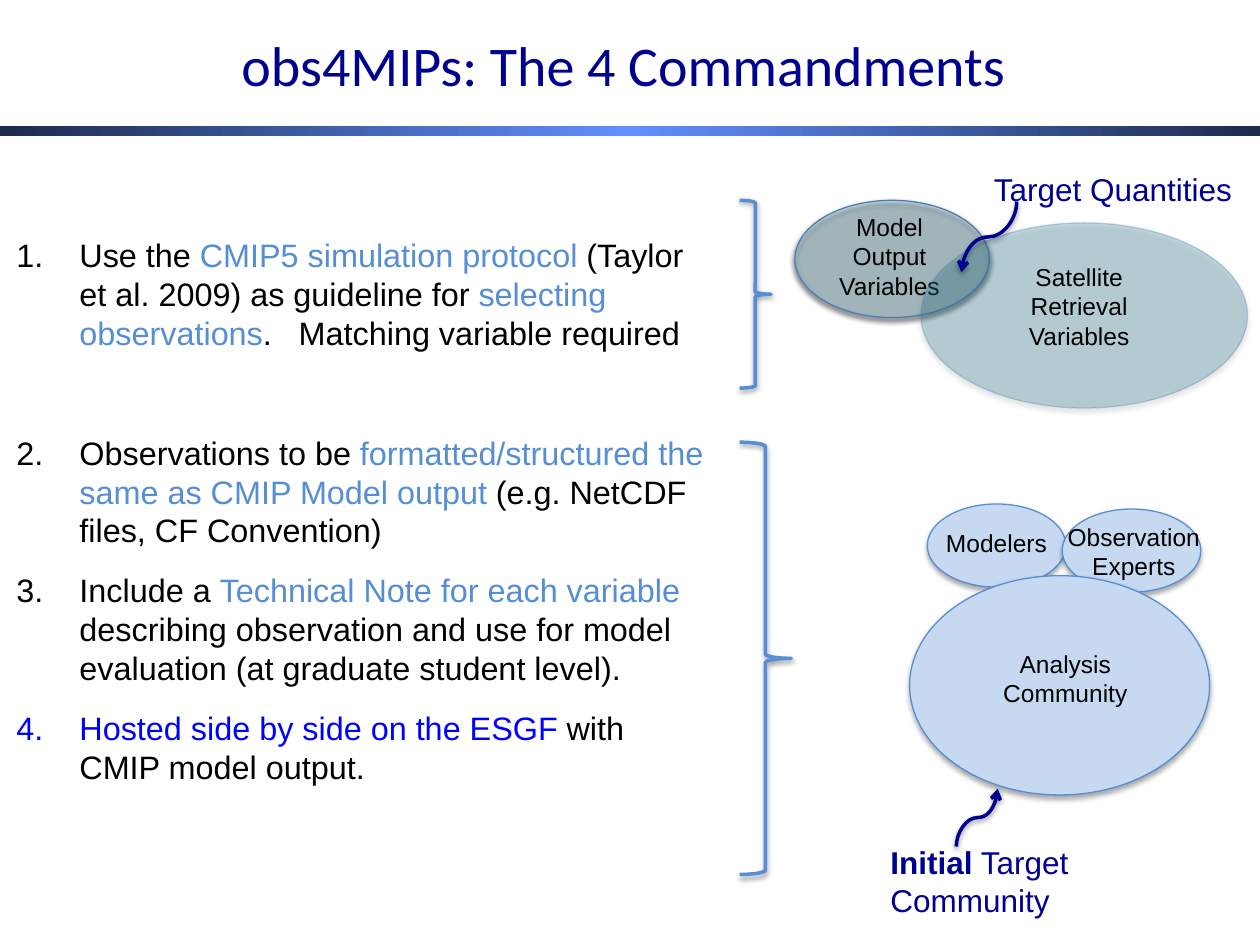
from dataclasses import dataclass
from typing import Optional

import lxml.etree
import pptx
import pptx.dml.color
import pptx.enum.dml
import pptx.enum.shapes
import pptx.enum.text
import pptx.oxml
import pptx.oxml.ns
import pptx.util

Pt = pptx.util.Pt
RGB = pptx.dml.color.RGBColor
Align = pptx.enum.text.PP_ALIGN
Anchor = pptx.enum.text.MSO_ANCHOR
Fit = pptx.enum.text.MSO_AUTO_SIZE
Kind = pptx.enum.shapes.MSO_SHAPE
qn = pptx.oxml.ns.qn

BLACK = RGB(0, 0, 0)
NAVY = RGB(0x00, 0x00, 0x90)
BLUE = RGB(0x00, 0x00, 0xFF)
SKY = RGB(0x55, 0x8E, 0xD5)
PALE = RGB(0xC6, 0xD9, 0xF1)
AQUA = RGB(0x93, 0xCD, 0xDD)
TEAL = RGB(0x31, 0x85, 0x9C)
STEEL = RGB(0x4B, 0x7E, 0xBC)
DARK = RGB(0x1D, 0x2B, 0x4D)
BRIGHT = RGB(0x61, 0x8F, 0xFD)


@dataclass
class Box:
    left: float
    top: float
    width: float
    height: float

    def pts(self) -> list:
        return [Pt(v) for v in (self.left, self.top, self.width, self.height)]


@dataclass
class Oval:
    box: Box
    fill: RGB = PALE
    line: RGB = SKY
    alpha: int = 100
    edge: int = 100


@dataclass
class Label:
    box: Box
    text: str
    size: float = 14
    color: RGB = BLACK
    align: Align = Align.CENTER
    wrap: bool = False
    bold: str = ""


@dataclass
class Item:
    runs: list
    after: float = 12


def style(run, size: float, color: RGB, face: str = "Arial") -> None:
    run.font.size = Pt(size)
    run.font.name = face
    run.font.color.rgb = color


def fade(fill, alpha: int) -> None:
    if alpha < 100:
        tone = fill._xPr.find(".//" + qn("a:srgbClr"))
        lxml.etree.SubElement(tone, qn("a:alpha")).set("val", str(alpha * 1000))


def shade(shape, alpha: int, dist: float) -> None:
    shape._element.spPr.append(pptx.oxml.parse_xml(
        f'<a:effectLst {pptx.oxml.ns.nsdecls("a")}>'
        f'<a:outerShdw blurRad="{Pt(3.1)}" dist="{Pt(dist)}" dir="5400000" rotWithShape="0">'
        f'<a:srgbClr val="000000"><a:alpha val="{alpha * 1000}"/></a:srgbClr>'
        '</a:outerShdw></a:effectLst>'))


def draw_oval(shapes, oval: Oval) -> None:
    shape = shapes.add_shape(Kind.OVAL, *oval.box.pts())
    shape.fill.solid()
    shape.fill.fore_color.rgb = oval.fill
    fade(shape.fill, oval.alpha)
    shape.line.color.rgb = oval.line
    shape.line.width = Pt(0.75)
    fade(shape.line.fill, oval.edge)
    shade(shape, 35, 1.8)


def draw_label(shapes, label: Label) -> None:
    frame = shapes.add_textbox(*label.box.pts()).text_frame
    frame.word_wrap = label.wrap
    frame.text = label.text
    for para in frame.paragraphs:
        para.alignment = label.align
    if label.bold:
        first = frame.paragraphs[0]
        rest = first.text
        first.text = label.bold
        first.runs[0].font.bold = True
        first.add_run().text = rest
    for para in frame.paragraphs:
        for run in para.runs:
            style(run, label.size, label.color)


def draw_brace(shapes, box: Box) -> None:
    shape = shapes.add_shape(Kind.RIGHT_BRACE, *box.pts())
    shape.fill.background()
    shape.line.color.rgb = SKY
    shape.line.width = Pt(2)
    shade(shape, 38, 1.6)


def draw_curve(shapes, start: tuple, end: tuple) -> None:
    """Curve that leaves and arrives vertically: a quarter-turned S."""
    midx, midy = (start[0] + end[0]) / 2, (start[1] + end[1]) / 2
    dx, dy = (end[1] - start[1]) / 2, (start[0] - end[0]) / 2
    line = shapes.add_connector(
        pptx.enum.shapes.MSO_CONNECTOR.CURVE,
        Pt(midx - dx), Pt(midy - dy), Pt(midx + dx), Pt(midy + dy))
    line._element.spPr.find(qn("a:xfrm")).set("rot", "5400000")
    line.line.color.rgb = NAVY
    line.line.width = Pt(2)
    lxml.etree.SubElement(line.line._ln, qn("a:tailEnd")).set("type", "arrow")
    shade(line, 38, 1.6)


def draw_bar(shapes) -> None:
    bar = shapes.add_shape(Kind.RECTANGLE, *Box(0, 72, 720, 5.76).pts())
    bar.shadow.inherit = False
    bar.line.fill.background()
    bar.fill.gradient()
    bar.fill.gradient_angle = 0
    stops = bar.fill._xPr.find(".//" + qn("a:gsLst"))
    for stop in list(stops):
        stops.remove(stop)
    for place, color in ((0, DARK), (50, BRIGHT), (100, DARK)):
        stop = lxml.etree.SubElement(stops, qn("a:gs"))
        stop.set("pos", str(place * 1000))
        lxml.etree.SubElement(stop, qn("a:srgbClr")).set("val", str(color))


def place(holder, box: Box):
    holder.left, holder.top, holder.width, holder.height = box.pts()
    holder.text_frame.auto_size = Fit.NONE
    return holder.text_frame


def fill_list(frame, items: list) -> None:
    frame.vertical_anchor = Anchor.TOP
    for index, item in enumerate(items):
        para = frame.add_paragraph() if index else frame.paragraphs[0]
        para.alignment = Align.LEFT
        para.space_before, para.space_after = Pt(0), Pt(item.after)
        props = para._p.get_or_add_pPr()
        props.set("marL", str(Pt(36)))
        props.set("indent", str(-Pt(36)))
        lxml.etree.SubElement(props, qn("a:buFont")).set("typeface", "+mj-lt")
        lxml.etree.SubElement(props, qn("a:buAutoNum")).set("type", "arabicPeriod")
        for text, color in item.runs:
            run = para.add_run()
            run.text = text
            style(run, 18.5, color)


ITEMS = [
    Item([("Use the ", BLACK), ("CMIP5 simulation protocol ", SKY),
          ("(Taylor et al. 2009) as guideline for ", BLACK),
          ("selecting observations", SKY),
          (".   Matching variable required", BLACK)], after=46),
    Item([("Observations to be ", BLACK),
          ("formatted/structured the same as CMIP Model output ", SKY),
          ("(e.g. NetCDF files, CF Convention)", BLACK)]),
    Item([("Include a ", BLACK), ("Technical Note for each variable ", SKY),
          ("describing observation and use for model evaluation "
           "(at graduate student level).", BLACK)]),
    Item([("Hosted side by side on the ESGF ", BLUE),
          ("with CMIP model output.", BLACK)]),
]

# Ovals and labels, back to front
PARTS = [
    Oval(Box(454.3, 114.5, 111, 67), AQUA, STEEL, 35),
    Label(Box(467.3, 117.4, 82, 58.3), "Model Output\nVariables", wrap=True),
    Oval(Box(526.3, 127.4, 186.5, 105.8), TEAL, STEEL, 28, 32),
    Label(Box(568.8, 146.2, 95.8, 58.3), "Satellite Retrieval\nVariables", wrap=True),
    Label(Box(560.9, 93.6, 152, 28.8), "Target Quantities", 18, NAVY, Align.LEFT),
    Oval(Box(529.9, 288, 79.2, 47.5)),
    Label(Box(533.5, 298.1, 72, 24.5), "Modelers", align=Align.LEFT),
    Oval(Box(607, 290.9, 79.2, 47.5)),
    Label(Box(602.6, 294.5, 90.7, 41), "Observation\nExperts"),
    Oval(Box(519.8, 329, 171.4, 125.3)),
    Label(Box(564.5, 367.2, 88.6, 41), "Analysis\nCommunity"),
    Label(Box(501.8, 478.1, 117.4, 51.1), " Target\nCommunity", 18, NAVY,
          Align.LEFT, bold="Initial"),
]


def main() -> None:
    deck = pptx.Presentation()
    deck.slide_width, deck.slide_height = Pt(720), Pt(540)
    slide = deck.slides.add_slide(deck.slide_layouts[1])
    shapes = slide.shapes
    draw_bar(shapes)

    # Title and numbered list
    frame = place(shapes.title, Box(32.4, -8.6, 648, 90))
    frame.text = "obs4MIPs: The 4 Commandments"
    frame.vertical_anchor = Anchor.MIDDLE
    frame.paragraphs[0].alignment = Align.CENTER
    style(frame.paragraphs[0].runs[0], 32, NAVY, "Calibri")
    fill_list(place(slide.placeholders[1], Box(2.2, 131, 412.6, 329.8)), ITEMS)

    # Diagrams, pointers and braces
    for part in PARTS:
        if isinstance(part, Oval):
            draw_oval(shapes, part)
        else:
            draw_label(shapes, part)
    draw_curve(shapes, (581, 115.2), (549.4, 155.5))
    draw_curve(shapes, (546.5, 483.8), (570.2, 450.7))
    draw_brace(shapes, Box(422.6, 114.5, 18, 107.3))
    draw_brace(shapes, Box(422.6, 252.7, 29.5, 247))
    deck.save("out.pptx")


if __name__ == "__main__":
    main()
